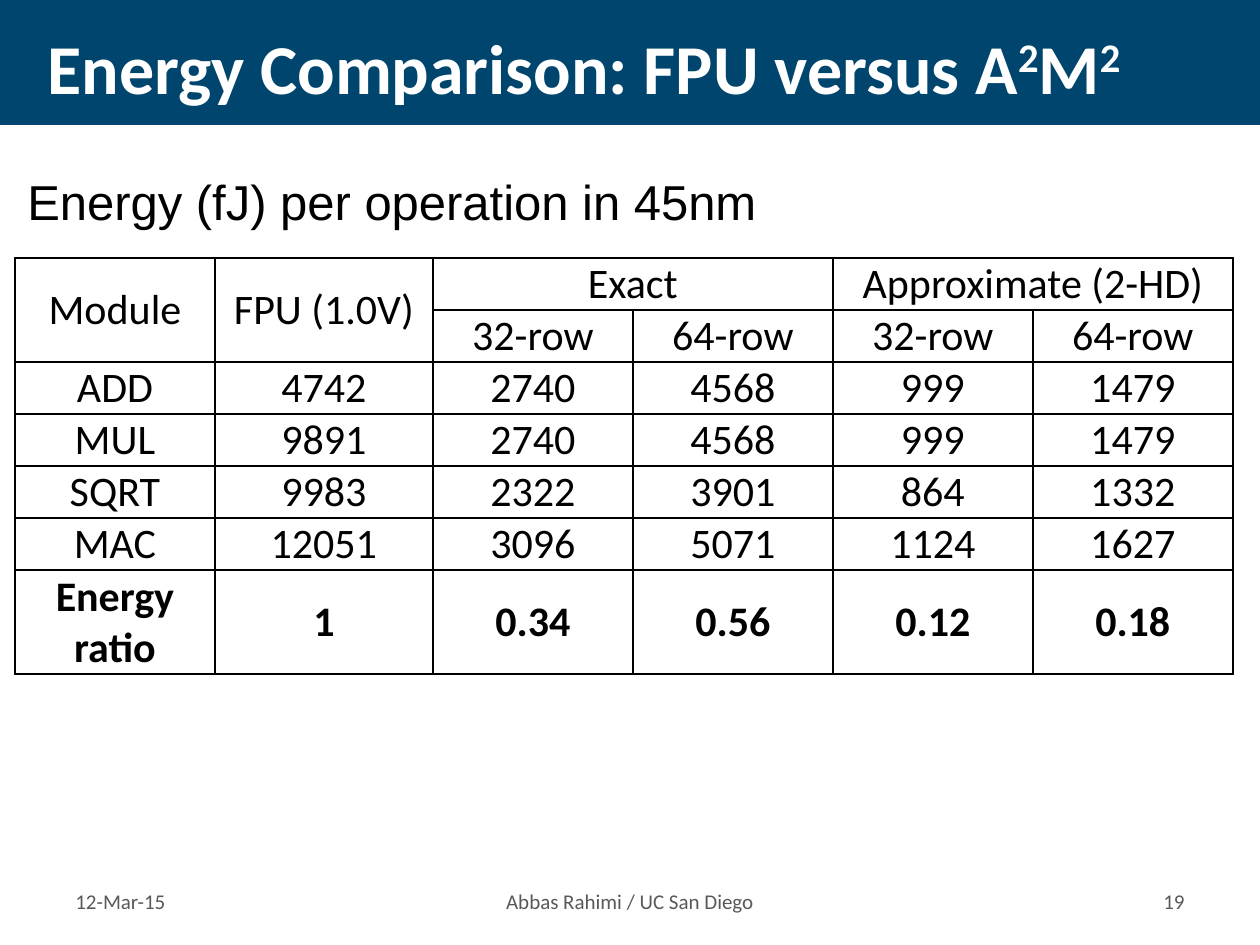
from pptx import Presentation, util as u
from pptx.dml.color import RGBColor
from pptx.enum import shapes, text
from pptx.oxml import parse_xml
from pptx.oxml.ns import nsdecls

NAVY = RGBColor(0x00, 0x45, 0x6E)
WHITE = RGBColor(0xFF, 0xFF, 0xFF)
BLACK = RGBColor(0x00, 0x00, 0x00)
GRAY = RGBColor(0x59, 0x59, 0x59)

LEFT, MID, RIGHT = text.PP_ALIGN.LEFT, text.PP_ALIGN.CENTER, text.PP_ALIGN.RIGHT
CENTER = text.MSO_ANCHOR.MIDDLE
TITLE = [("Energy Comparison: FPU versus A", 0), ("2", 30), ("M", 0), ("2", 30)]
ROWS = [
    ["Module", "FPU (1.0V)", "Exact", "", "Approximate (2-HD)", ""],
    ["", "", "32-row", "64-row", "32-row", "64-row"],
    ["ADD", "4742", "2740", "4568", "999", "1479"],
    ["MUL", "9891", "2740", "4568", "999", "1479"],
    ["SQRT", "9983", "2322", "3901", "864", "1332"],
    ["MAC", "12051", "3096", "5071", "1124", "1627"],
    ["Energy ratio", "1", "0.34", "0.56", "0.12", "0.18"],
]
SPANS = [(0, 0, 1, 0), (0, 1, 1, 1), (0, 2, 0, 3), (0, 4, 0, 5)]


def px(n):
    """Turn pixels into EMU."""
    return u.Emu(round(n * 914400 / 126))


def style(item, **vals):
    """Set each given attribute on the item."""
    for key, val in vals.items():
        setattr(item, key, val)


def write(para, words, size, color, name="Calibri", bold=False, align=LEFT):
    """Add one formatted run to a paragraph and return it."""
    run = para.add_run()
    run.text = words
    para.alignment = align
    style(run.font, size=u.Pt(size), name=name, bold=bold)
    run.font.color.rgb = color
    return run


def head(slide, x, y, w, h):
    """Draw the title bar and fill the title placeholder on it."""
    bar = slide.shapes.add_shape(shapes.MSO_SHAPE.RECTANGLE, px(x), px(y), px(w), px(h))
    bar.shadow.inherit = False
    bar.fill.solid()
    bar.fill.fore_color.rgb = NAVY
    bar.line.fill.background()
    slide.shapes._spTree.insert(2, bar._element)
    title = slide.shapes.title
    style(title, left=px(x + 35), top=px(y + 13), width=px(w - 69), height=px(h - 19))
    style(title.text_frame, word_wrap=False, vertical_anchor=CENTER,
          auto_size=text.MSO_AUTO_SIZE.NONE)
    for words, lift in TITLE:
        run = write(title.text_frame.paragraphs[0], words, 40, WHITE, bold=True)
        if lift:
            run.font._element.set("baseline", str(lift * 1000))


def label(slide, x, y, w, h, words, size, color, anchor=CENTER, **form):
    """Place one line of text in a box."""
    frame = slide.shapes.add_textbox(px(x), px(y), px(w), px(h)).text_frame
    style(frame, word_wrap=True, vertical_anchor=anchor)
    write(frame.paragraphs[0], words, size, color, **form)


def border(cell):
    """Rule all four sides of a cell."""
    props = cell._tc.get_or_add_tcPr()
    for side in "LRTB":
        props.append(parse_xml(
            f'<a:ln{side} {nsdecls("a")} w="12700"><a:solidFill>'
            f'<a:srgbClr val="{BLACK}"/></a:solidFill></a:ln{side}>'))


def grid(slide, x, y, w, h):
    """Build the energy table, with a wider second column and a taller last row."""
    count, wide = len(ROWS), len(ROWS[0])
    table = slide.shapes.add_table(count, wide, px(x), px(y), px(w), px(h)).table
    style(table, first_row=False, horz_banding=False)
    unit, step = (w - 18) // wide, h // (count + 1)
    for i, col in enumerate(table.columns):
        col.width = px(unit + 18 if i == 1 else unit)
    for i, row in enumerate(table.rows):
        row.height = px(2 * step if i == count - 1 else step)
    for top, left, low, right in SPANS:
        table.cell(top, left).merge(table.cell(low, right))
    for i, row in enumerate(ROWS):
        for j, words in enumerate(row):
            cell = table.cell(i, j)
            border(cell)
            cell.fill.background()
            style(cell, margin_left=px(1), margin_right=px(1), margin_top=px(1),
                  margin_bottom=0, vertical_anchor=CENTER)
            if words:
                write(cell.text_frame.paragraphs[0], words, 24, BLACK,
                      bold=i == count - 1, align=MID)


def foot(slide, x, y, w, h):
    """Place the date, author and page number along the bottom."""
    side, gap = 150, 20
    label(slide, x, y, side, h, "12-Mar-15", 12, GRAY)
    label(slide, x + side + gap, y, w - 2 * (side + gap), h,
          "Abbas Rahimi / UC San Diego", 12, GRAY, align=MID)
    label(slide, x + w - side, y, side, h, "19", 12, GRAY, align=RIGHT)


def main():
    """Build and save the slide."""
    deck = Presentation()
    style(deck, slide_width=px(1260), slide_height=px(945))
    slide = deck.slides.add_slide(deck.slide_layouts[5])
    head(slide, 0, 0, 1260, 125)
    foot(slide, 63, 876, 1134, 50)
    grid(slide, 15, 258, 1222, 420)
    label(slide, 15, 165, 932, 72, "Energy (fJ) per operation in 45nm", 28, BLACK,
          anchor=text.MSO_ANCHOR.TOP, name="Arial")
    deck.save("out.pptx")


if __name__ == "__main__":
    main()
